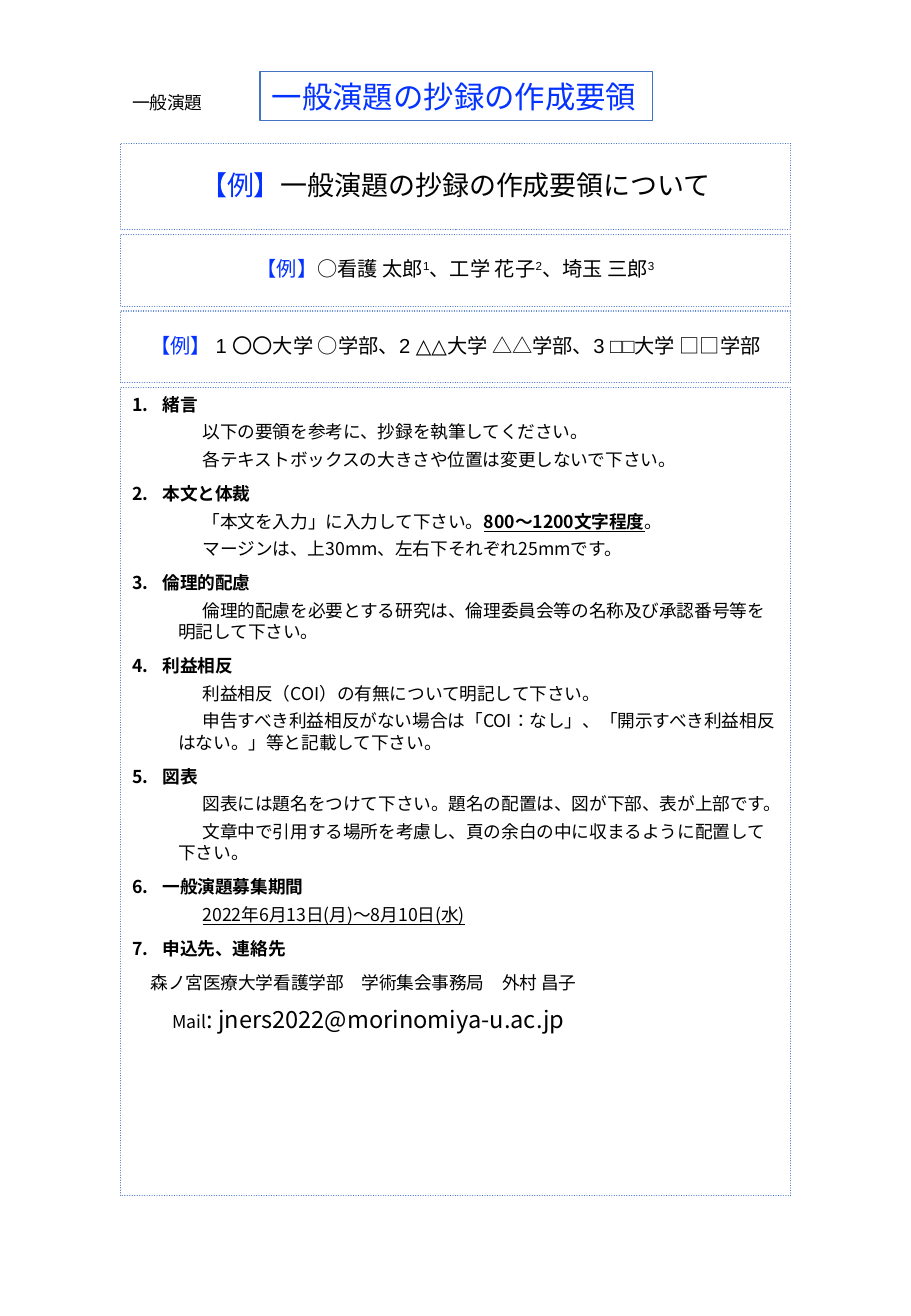
from lxml.etree import SubElement
from pptx import Presentation
from pptx.dml.color import RGBColor
from pptx.enum.dml import MSO_LINE
from pptx.enum.lang import MSO_LANGUAGE_ID
from pptx.enum.shapes import MSO_SHAPE
from pptx.enum.text import MSO_ANCHOR, PP_ALIGN
from pptx.oxml.ns import qn
from pptx.util import Inches, Pt

COLORS = {"black": "000000", "blue": "0432FF", "border": "4472C4"}
GOTHIC = "Noto Sans CJK JP"
FRAME_LEFT, FRAME_WIDTH = 0.99, 5.52

SECTIONS = [
    ("緒言", [
        [("以下の要領を参考に、抄録を執筆してください。", {})],
        [("各テキストボックスの大きさや位置は変更しないで下さい。", {})],
    ]),
    ("本文と体裁", [
        [("「本文を入力」に入力して下さい。", {}),
         ("800〜1200文字程度", {"bold": True, "underline": True}),
         ("。", {})],
        [("マージンは、上30mm、左右下それぞれ25mmです。", {})],
    ]),
    ("倫理的配慮", [
        [("倫理的配慮を必要とする研究は、倫理委員会等の名称及び承認番号等を明記して下さい。", {})],
    ]),
    ("利益相反", [
        [("利益相反（COI）の有無について明記して下さい。", {})],
        [("申告すべき利益相反がない場合は「COI：なし」、「開示すべき利益相反はない。」等と記載して下さい。", {})],
    ]),
    ("図表", [
        [("図表には題名をつけて下さい。題名の配置は、図が下部、表が上部です。", {})],
        [("文章中で引用する場所を考慮し、頁の余白の中に収まるように配置して下さい。", {})],
    ]),
    ("一般演題募集期間", [
        [("2022年6月13日(月)〜8月10日(水)", {"underline": True})],
    ]),
    ("申込先、連絡先", []),
]
CONTACTS = [
    (0.15, [("森ノ宮医療大学看護学部\u3000学術集会事務局\u3000外村 昌子", {})]),
    (0.33, [("Mail", {}), (": jners2022@morinomiya-u.ac.jp", {"size": 14})]),
]


class AbstractGuide:
    def __init__(self, slide):
        self.slide = slide

    def prepare_text(self, shape, anchor, wrap):
        frame = shape.text_frame
        frame.word_wrap = wrap
        frame.vertical_anchor = anchor
        return frame

    def label(self, left, top, width, height, text, size):
        shape = self.slide.shapes.add_textbox(
            Inches(left), Inches(top), Inches(width), Inches(height))
        frame = self.prepare_text(shape, MSO_ANCHOR.MIDDLE, False)
        self.run(frame.paragraphs[0], text, size, "Calibri")

    def frame(self, left, top, width, height, dotted=True,
              anchor=MSO_ANCHOR.MIDDLE, wrap=True):
        """Add an outlined, unfilled rectangle and return its text frame."""
        shape = self.slide.shapes.add_shape(
            MSO_SHAPE.RECTANGLE, Inches(left), Inches(top), Inches(width), Inches(height))
        shape.shadow.inherit = False
        shape.fill.background()
        shape.line.color.rgb = RGBColor.from_string(COLORS["border"])
        shape.line.width = Pt(0.75)
        if dotted:
            shape.line.dash_style = MSO_LINE.ROUND_DOT
            shape._element.spPr.find(qn("a:ln")).set("cap", "rnd")
        return self.prepare_text(shape, anchor, wrap)

    def run(self, paragraph, text, size=10.5, font=GOTHIC, color="black",
            bold=False, underline=False, raised=False):
        run = paragraph.add_run()
        run.text = text
        run.font.size = Pt(size)
        run.font.bold = bold
        run.font.underline = underline
        run.font.language_id = MSO_LANGUAGE_ID.JAPANESE
        run.font.color.rgb = RGBColor.from_string(COLORS[color])
        run.font.name = font
        properties = run.font._element
        SubElement(properties, qn("a:ea")).set("typeface", GOTHIC)
        if raised:
            properties.set("baseline", "30000")

    def example(self, top, height, size, font, runs):
        """Add a framed, centred line that opens with the example mark."""
        frame = self.frame(FRAME_LEFT, top, FRAME_WIDTH, height)
        paragraph = frame.paragraphs[0]
        paragraph.alignment = PP_ALIGN.CENTER
        paragraph.line_spacing = 0.9
        for text, style in [("【例】", {"color": "blue"})] + runs:
            self.run(paragraph, text, size, font, **style)

    def body_line(self, frame, runs, margin, indent=0, before=7.5, level=0, numbered=False):
        first = not frame.paragraphs[0].runs
        paragraph = frame.paragraphs[0] if first else frame.add_paragraph()
        paragraph.alignment = PP_ALIGN.LEFT
        paragraph.level = level
        paragraph.line_spacing = 1.0
        paragraph.space_before = Pt(0 if first else before)
        properties = paragraph._p.get_or_add_pPr()
        properties.set("marL", str(Inches(margin)))
        properties.set("indent", str(Inches(indent)))
        if numbered:
            SubElement(properties, qn("a:buAutoNum")).set("type", "arabicPeriod")
        for text, style in runs:
            self.run(paragraph, text, **style)

    def body(self, top, height):
        frame = self.frame(FRAME_LEFT, top, FRAME_WIDTH, height, anchor=MSO_ANCHOR.TOP)
        for heading, lines in SECTIONS:
            self.body_line(frame, [(heading, {"bold": True})], 0.25, -0.25, numbered=True)
            for runs in lines:
                self.body_line(frame, runs, 0.38, 0.2, before=3.8, level=1)
        for margin, runs in CONTACTS:
            self.body_line(frame, runs, margin)


def main():
    presentation = Presentation()
    presentation.slide_width = Inches(7.5)
    presentation.slide_height = Inches(10.83)
    guide = AbstractGuide(presentation.slides.add_slide(presentation.slide_layouts[6]))

    guide.label(0.99, 0.7, 0.82, 0.29, "一般演題", 10.5)
    guide.body(3.19, 6.65)
    guide.example(1.18, 0.71, 16, GOTHIC, [("一般演題の抄録の作成要領について", {})])
    guide.example(1.93, 0.59, 12, "Arial", [
        ("○看護 太郎", {}), ("1", {"raised": True}),
        ("、工学 花子", {}), ("2", {"raised": True}),
        ("、埼玉 三郎", {}), ("3", {"raised": True}),
    ])
    guide.example(2.56, 0.59, 12, "Arial", [
        (" 1 〇〇大学 ○学部、2 △△大学 △△学部、3 □□大学 □□学部", {}),
    ])
    heading = guide.frame(2.14, 0.59, 3.23, 0.4, dotted=False, wrap=False)
    heading.paragraphs[0].alignment = PP_ALIGN.LEFT
    guide.run(heading.paragraphs[0], "一般演題の抄録の作成要領", 18, "Calibri", "blue")

    presentation.save("out.pptx")


if __name__ == "__main__":
    main()
